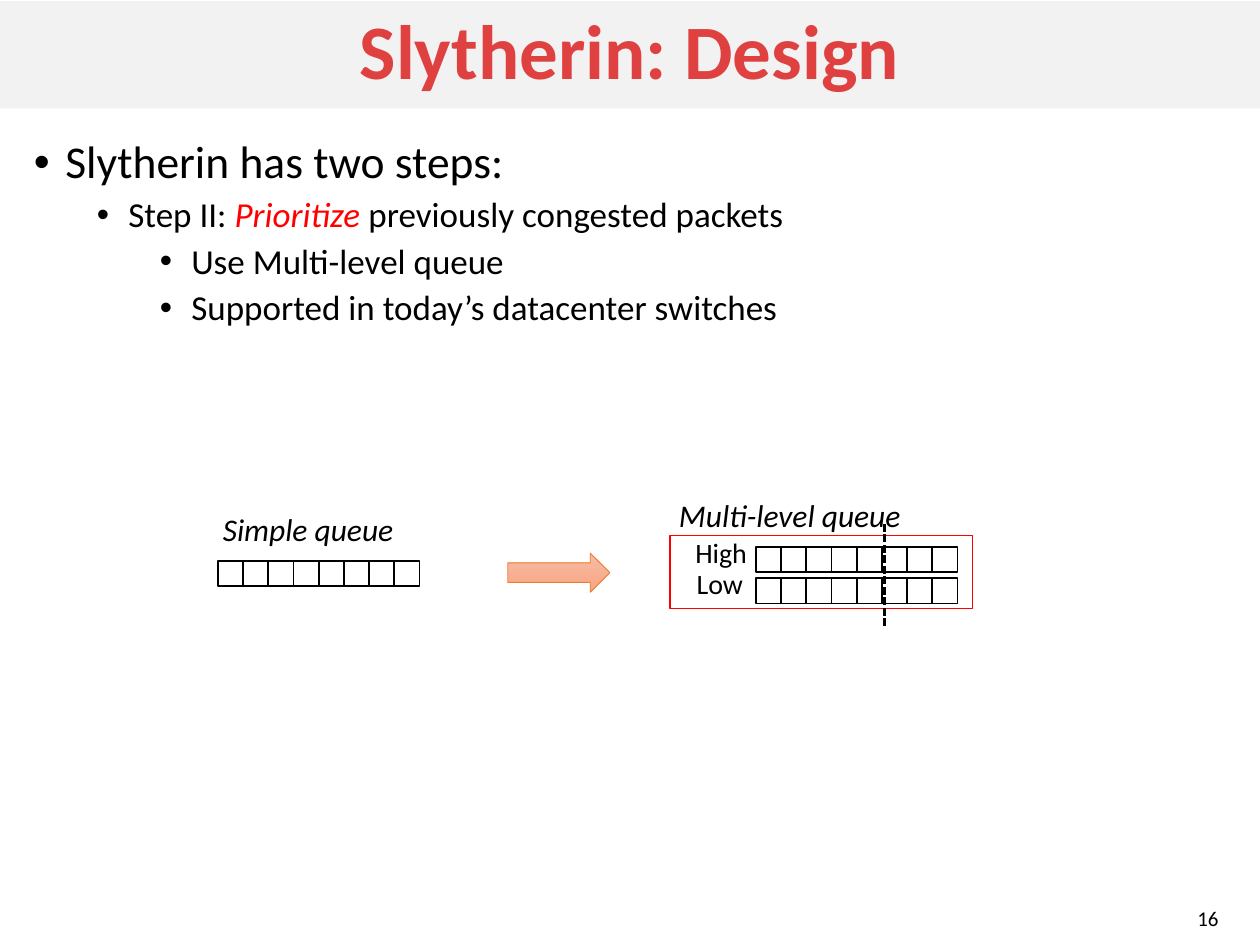
from lxml import etree
from pptx import Presentation
from pptx.dml.color import RGBColor
from pptx.enum import dml, shapes, text
from pptx.oxml.ns import qn
from pptx.util import Inches, Pt


def rgb(value):
    return RGBColor.from_string(value)


def add_text(s, box, content, size, italic=False, align=None, wrap=False):
    tb = s.shapes.add_textbox(*map(Inches, box))
    tf = tb.text_frame
    tf.word_wrap = wrap
    p = tf.paragraphs[0]
    p.text = content
    p.alignment = align
    p.font.name = "Calibri"
    p.font.size = Pt(size)
    p.font.italic = italic
    p.font.color.rgb = rgb("000000")
    return tf


prs = Presentation()
prs.slide_width, prs.slide_height = Inches(10), Inches(7.5)
s = prs.slides.add_slide(prs.slide_layouts[5])

# Title band
title = s.shapes.title
title.left, title.top = Inches(0), Inches(0.01)
title.width, title.height = Inches(10), Inches(0.85)
title.fill.solid()
title.fill.fore_color.rgb = rgb("F2F2F2")
tf = title.text_frame
tf.text = "Slytherin: Design"
tf.vertical_anchor = text.MSO_ANCHOR.MIDDLE
p = tf.paragraphs[0]
p.alignment = text.PP_ALIGN.CENTER
p.line_spacing = 0.9
p.font.name = "Calibri"
p.font.size = Pt(44)
p.font.bold = True
p.font.color.rgb = rgb("DF4141")

# Bulleted outline: level, size, space before, runs
outline = [
    (0, 26, 12, ["Slytherin has two steps:"]),
    (1, 20, 5, ["Step II: ", "Prioritize ", "previously congested packets"]),
    (2, 20, 5, ["Use Multi-level queue"]),
    (2, 20, 5, ["Supported in today’s datacenter switches"]),
]
body = s.shapes.add_textbox(Inches(0.17), Inches(1.06), Inches(9.67), Inches(5.27))
tf = body.text_frame
tf.word_wrap = True
for i, (level, size, before, runs) in enumerate(outline):
    p = tf.paragraphs[0] if i == 0 else tf.add_paragraph()
    p.level = level
    p.line_spacing = 0.9
    p.space_before = Pt(before)
    p.font.name = "Calibri"
    p.font.size = Pt(size)
    for content in runs:
        r = p.add_run()
        r.text = content
        emphasis = content == "Prioritize "
        r.font.italic = emphasis
        r.font.color.rgb = rgb("FF0000" if emphasis else "000000")
    pPr = p._p.get_or_add_pPr()
    pPr.set("marL", str(Inches(0.25 + 0.5 * level)))
    pPr.set("indent", str(-Inches(0.25)))
    bullet_font = etree.Element(qn("a:buFont"), typeface="Arial")
    bullet = etree.Element(qn("a:buChar"), char="•")
    at = pPr.index(pPr.find(qn("a:defRPr")))
    pPr[at:at] = [bullet_font, bullet]

# Slide number
tf = add_text(s, (8.97, 7.14, 0.8, 0.3), "16", 12, align=text.PP_ALIGN.RIGHT, wrap=True)
tf.vertical_anchor = text.MSO_ANCHOR.MIDDLE

# Queues of eight cells, and the frame around the two priority levels
cell, cells = 0.2, 8
boxes = [
    (left + i * cell, top, cell, cell, "000000")
    for left, top in [(1.73, 4.45), (6, 4.34), (6, 4.59)]
    for i in range(cells)
]
boxes.append((5.32, 4.25, 2.4, 0.58, "FF0000"))
for *box, color in boxes:
    sp = s.shapes.add_shape(shapes.MSO_SHAPE.RECTANGLE, *map(Inches, box))
    sp.shadow.inherit = False
    sp.fill.background()
    sp.line.color.rgb = rgb(color)
    sp.line.width = Pt(1)

# Queue labels
add_text(s, (1.67, 4, 1.57, 0.4), "Simple queue", 18, italic=True)
add_text(s, (5.29, 3.89, 1.98, 0.4), "Multi-level queue", 18, italic=True)
add_text(s, (5.42, 4.2, 0.62, 0.37), "High", 16)
add_text(s, (5.43, 4.45, 0.58, 0.37), "Low", 16)

# Dashed threshold across both levels
threshold = s.shapes.add_connector(
    shapes.MSO_CONNECTOR.STRAIGHT, Inches(7.02), Inches(4.97), Inches(7.02), Inches(4.14)
)
threshold.line.color.rgb = rgb("000000")
threshold.line.width = Pt(1.5)
threshold.line.dash_style = dml.MSO_LINE.SQUARE_DOT
etree.SubElement(threshold._element.spPr, qn("a:effectLst"))

# Arrow from the simple queue to the multi-level queue
arrow = s.shapes.add_shape(
    shapes.MSO_SHAPE.RIGHT_ARROW, Inches(4.03), Inches(4.39), Inches(0.81), Inches(0.31)
)
arrow.shadow.inherit = False
arrow.fill.gradient()
arrow.fill.gradient_angle = 270
for stop, color in zip(arrow.fill.gradient_stops, ["F7BDA5", "F8A582"]):
    stop.color.rgb = rgb(color)
arrow.line.color.rgb = rgb("ED7D31")
arrow.line.width = Pt(0.5)

prs.save("out.pptx")
